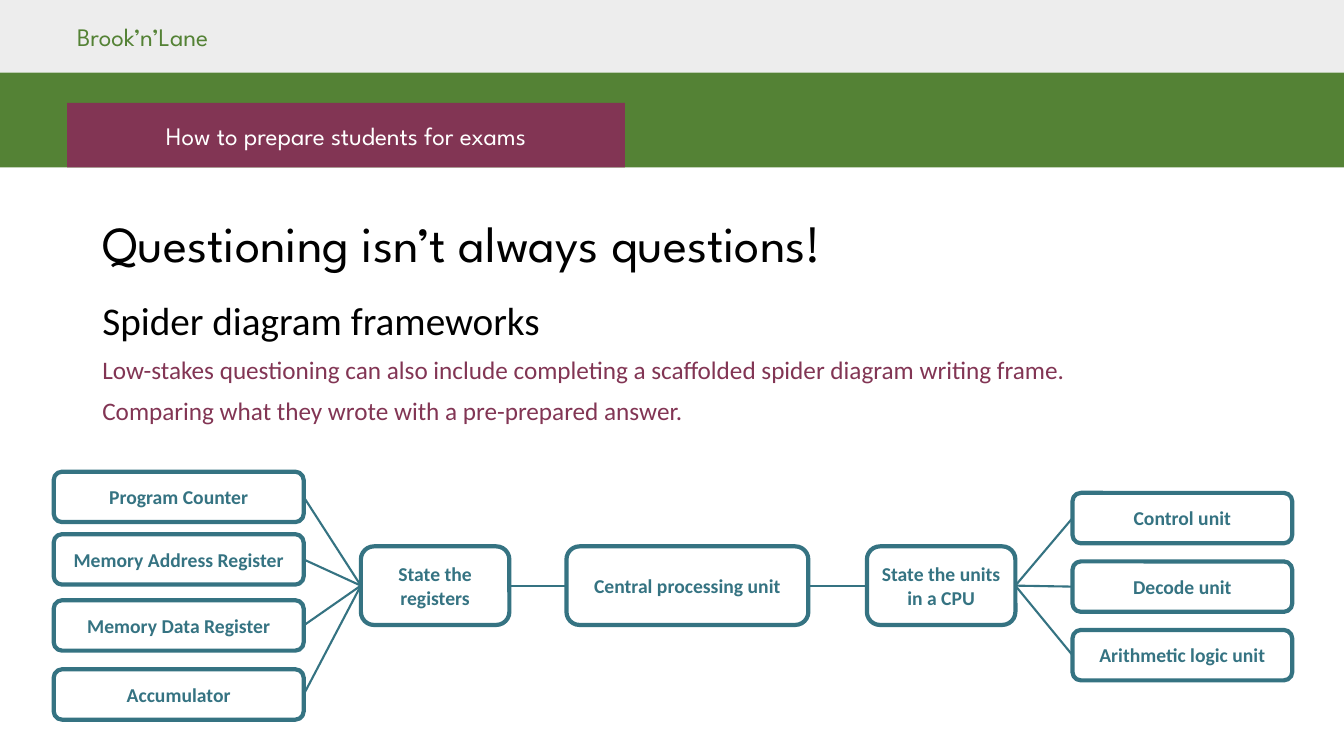
import dataclasses

import pptx
import pptx.dml.color
import pptx.enum.shapes
import pptx.enum.text
import pptx.oxml.ns
import pptx.util
from lxml import etree

SHAPES = pptx.enum.shapes.MSO_SHAPE
TOP, LEFT, BOTTOM, RIGHT = range(4)


@dataclasses.dataclass(frozen=True)
class Theme:
    display: str = "League Spartan"
    body: str = "Calibri"
    grey: str = "EDEDED"
    green: str = "548235"
    plum: str = "823554"
    teal: str = "357382"
    black: str = "000000"
    white: str = "FFFFFF"
    title_size: int = 36
    heading_size: int = 28
    text_size: int = 18
    node_size: int = 14
    node_line: float = 3
    link_line: float = 1.5


class SlideBuilder:
    """Places elements on a grid of 40 columns by 30 rows."""

    def __init__(self, presentation, theme):
        self.theme = theme
        self.slide = presentation.slides.add_slide(presentation.slide_layouts[6])
        self.column = presentation.slide_width / 40
        self.row = presentation.slide_height / 30

    def place(self, left, top, width, height):
        return (round(left * self.column), round(top * self.row),
                round(width * self.column), round(height * self.row))

    def color(self, value):
        return pptx.dml.color.RGBColor.from_string(value)

    def style_text(self, paragraph, text, size, color, font, bold=False):
        paragraph.text = text
        paragraph.font.size = pptx.util.Pt(size)
        paragraph.font.color.rgb = self.color(color)
        paragraph.font.name = font
        paragraph.font.bold = bold

    def text(self, area, lines, wrap=True, spacing=1.0):
        frame = self.slide.shapes.add_textbox(*self.place(*area)).text_frame
        frame.word_wrap = wrap
        for index, line in enumerate(lines):
            paragraph = frame.add_paragraph() if index else frame.paragraphs[0]
            self.style_text(paragraph, *line)
            paragraph.line_spacing = spacing
            if index:
                paragraph.space_before = pptx.util.Pt(10)

    def shape(self, kind, area, fill=None, line=None):
        shape = self.slide.shapes.add_shape(kind, *self.place(*area))
        shape.shadow.inherit = False
        if fill:
            shape.fill.solid()
            shape.fill.fore_color.rgb = self.color(fill)
        else:
            shape.fill.background()
        if line:
            shape.line.color.rgb = self.color(line)
            shape.line.width = pptx.util.Pt(self.theme.node_line)
        else:
            shape.line.fill.background()
        return shape

    def band(self, area, fill):
        return self.shape(SHAPES.RECTANGLE, area, fill=fill)

    def label(self, shape, *style):
        frame = shape.text_frame
        frame.word_wrap = True
        frame.vertical_anchor = pptx.enum.text.MSO_ANCHOR.MIDDLE
        paragraph = frame.paragraphs[0]
        paragraph.alignment = pptx.enum.text.PP_ALIGN.CENTER
        self.style_text(paragraph, *style)

    def node(self, text, area):
        theme = self.theme
        node = self.shape(SHAPES.FLOWCHART_ALTERNATE_PROCESS, area, line=theme.teal)
        self.label(node, text, theme.node_size, theme.teal, theme.body, True)
        return node

    def link(self, start, start_side, end, end_side):
        link = self.slide.shapes.add_connector(
            pptx.enum.shapes.MSO_CONNECTOR.STRAIGHT, 0, 0, 0, 0)
        link.begin_connect(start, start_side)
        link.end_connect(end, end_side)
        link.line.color.rgb = self.color(self.theme.teal)
        link.line.width = pptx.util.Pt(self.theme.link_line)
        properties = link._element.spPr
        etree.SubElement(properties, pptx.oxml.ns.qn("a:effectLst"))


def main():
    presentation = pptx.Presentation()
    presentation.slide_width = pptx.util.Inches(13.33)
    presentation.slide_height = pptx.util.Inches(7.5)
    theme = Theme()
    builder = SlideBuilder(presentation, theme)

    # Header bands and topic tab
    builder.band((0, 0, 40, 2.88), theme.grey)
    builder.text((2, 0.64, 5.6, 1.6),
                 [("Brook’n’Lane", theme.text_size, theme.green, theme.display)],
                 wrap=False)
    builder.band((0, 2.88, 40, 3.76), theme.green)
    tab = builder.band((2, 4.08, 16.6, 2.56), theme.plum)
    builder.label(tab, "How to prepare students for exams",
                  theme.text_size, theme.white, theme.display)

    # Title and introduction
    builder.text((2.75, 8.48, 34.5, 2.36),
                 [("Questioning isn’t always questions!",
                   theme.title_size, theme.black, theme.display)], spacing=0.9)
    introduction = (theme.text_size, theme.plum, theme.body)
    builder.text((2.75, 11.76, 34.5, 17.64), [
        ("Spider diagram frameworks", theme.heading_size, theme.black, theme.body),
        ("Low-stakes questioning can also include completing a scaffolded "
         "spider diagram writing frame.", *introduction),
        ("Comparing what they wrote with a pre-prepared answer.", *introduction),
    ], spacing=0.9)

    # Centre of the spider diagram
    middle, middle_height = 21.68, 3.12
    processor = builder.node("Central processing unit",
                             (16.86, middle, 7.2, middle_height))
    registers = builder.node("State the registers",
                             (10.74, middle, 4.42, middle_height))
    units = builder.node("State the units in a CPU",
                         (25.8, middle, 4.42, middle_height))
    builder.link(processor, RIGHT, units, LEFT)
    builder.link(processor, LEFT, registers, RIGHT)

    # Left legs: registers
    for name, top in (("Program Counter", 18.72),
                      ("Memory Address Register", 21.2),
                      ("Memory Data Register", 23.82),
                      ("Accumulator", 26.56)):
        leg = builder.node(name, (1.6, top, 7.44, 2))
        builder.link(registers, LEFT, leg, RIGHT)

    # Right legs: units, evenly spaced
    for index, name in enumerate(("Control unit", "Decode unit",
                                  "Arithmetic logic unit")):
        leg = builder.node(name, (31.92, 19.56 + index * 2.72, 6.54, 2))
        builder.link(units, RIGHT, leg, LEFT)

    presentation.save("out.pptx")


if __name__ == "__main__":
    main()
